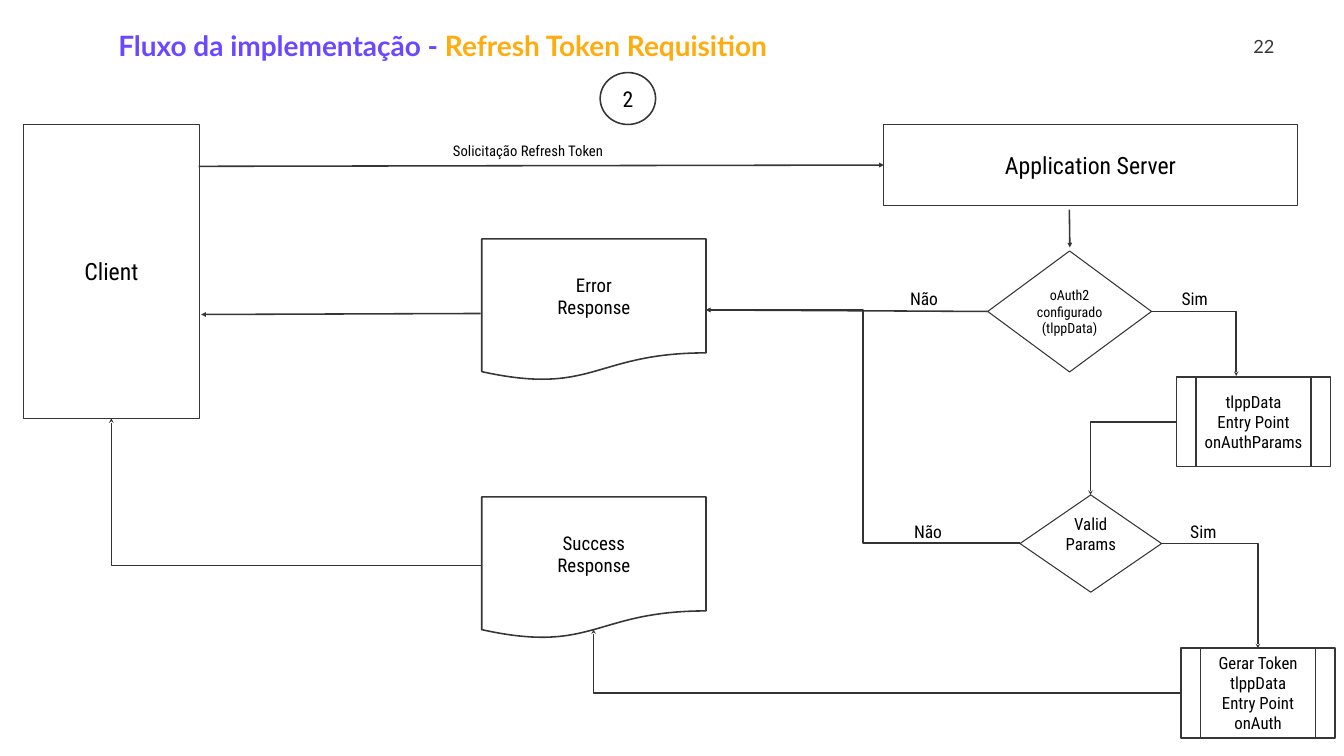
from pptx import Presentation
from pptx.dml.color import RGBColor
from pptx.enum.shapes import MSO_CONNECTOR, MSO_SHAPE
from pptx.enum.text import MSO_ANCHOR, PP_ALIGN
from pptx.oxml.ns import qn
from pptx.util import Pt
from lxml.etree import SubElement

EMU_PER_PX = 9144
INK = "363636"
ELBOW_INK = "333333"
BLACK = "000000"


def px(n):
    return n * EMU_PER_PX


def rgb(value):
    return RGBColor.from_string(value)


class Flow:
    font = "Roboto Condensed"

    def __init__(self, slide):
        self.slide = slide

    def set_text(self, sp, paragraphs, align, **fmt):
        tf = sp.text_frame
        values = {"word_wrap": True, "margin_left": px(10), "margin_right": px(10),
                  "margin_top": px(10), "margin_bottom": px(10), **fmt}
        for name, value in values.items():
            setattr(tf, name, value)
        for i, runs in enumerate(paragraphs):
            p = tf.paragraphs[0] if i == 0 else tf.add_paragraph()
            p.alignment = align
            for text, size, color, font, bold in runs:
                r = p.add_run()
                r.text = text
                for name, value in {"size": Pt(size), "name": font, "bold": bold}.items():
                    setattr(r.font, name, value)
                r.font.color.rgb = rgb(color)

    def node(self, kind, x, y, w, h, lines, size, weight=1.5, **fmt):
        sp = self.slide.shapes.add_shape(kind, px(x), px(y), px(w), px(h))
        sp.shadow.inherit = False
        sp.fill.background()
        sp.line.color.rgb = rgb(INK)
        sp.line.width = Pt(weight)
        paragraphs = [[(line, size, BLACK, self.font, False)] for line in lines]
        self.set_text(sp, paragraphs, PP_ALIGN.CENTER,
                      vertical_anchor=MSO_ANCHOR.MIDDLE, **fmt)
        return sp

    def text(self, x, y, w, h, runs, align=PP_ALIGN.LEFT, **fmt):
        sp = self.slide.shapes.add_textbox(px(x), px(y), px(w), px(h))
        self.set_text(sp, [runs], align, **fmt)

    def label(self, x, y, w, h, text, size=25):
        self.text(x, y, w, h, [(text, size, BLACK, self.font, False)])

    def connector(self, kind, start, end, color, head):
        c = self.slide.shapes.add_connector(kind, *map(px, start + end))
        c.line.color.rgb = rgb(color)
        c.line.width = Pt(2.25)
        properties = c.element.spPr
        SubElement(properties.find(qn("a:ln")), qn("a:tailEnd"), type=head)
        SubElement(properties, qn("a:effectLst"))
        return c

    def arrow(self, start, end, source=None, target=None):
        c = self.connector(MSO_CONNECTOR.STRAIGHT, start, end, INK, "triangle")
        if source:
            c.begin_connect(*source)
        if target:
            c.end_connect(*target)

    def elbow(self, start, end, corner=True):
        c = self.connector(MSO_CONNECTOR.ELBOW, start, end, ELBOW_INK, "stealth")
        if corner:
            c.element.spPr.find(qn("a:prstGeom")).set("prst", "bentConnector2")


def main():
    prs = Presentation()
    prs.slide_width, prs.slide_height = px(2667), px(1500)
    s = prs.slides.add_slide(prs.slide_layouts[6])
    flow = Flow(s)

    slim = {"margin_top": px(5), "margin_bottom": px(5)}
    flow.text(225, 52, 1512, 82,
              [("Fluxo da implementação - ", 40, "6B48FF", "Lato", True),
               ("Refresh Token Requisition", 40, "FEAC0E", "Lato", True)], **slim)
    flow.text(2429, 50, 110, 82, [("22", 26, INK, "Lato", False)], PP_ALIGN.RIGHT,
              vertical_anchor=MSO_ANCHOR.MIDDLE, **slim)

    rect, decision = MSO_SHAPE.RECTANGLE, MSO_SHAPE.FLOWCHART_DECISION
    process, document = MSO_SHAPE.FLOWCHART_PREDEFINED_PROCESS, MSO_SHAPE.FLOWCHART_DOCUMENT
    flow.node(rect, 47, 247, 348, 583, ["Client"], 34)
    server = flow.node(rect, 1754, 247, 820, 161, ["Application Server"], 34)
    configured = flow.node(decision, 1960, 498, 325, 240,
                           ["oAuth2 configurado", "(tlppData)"], 20)
    flow.node(decision, 2024, 982, 281, 193, ["Valid", "Params"], 24,
              margin_bottom=px(50))
    flow.node(process, 2335, 748, 305, 178,
              ["tlppData", "Entry Point", "onAuthParams"], 24, 2.25)
    flow.node(process, 2344, 1286, 305, 178,
              ["Gerar Token", "tlppData", "Entry Point", "onAuth"], 24, 2.25)
    error, _ = [
        flow.node(document, 956, y, 445, 282, [name, "Response"], 27, 2.25)
        for name, y in (("Error", 474), ("Success", 986))]
    flow.node(MSO_SHAPE.FLOWCHART_CONNECTOR, 1191, 144, 110, 103, ["2"], 31, 2.25)

    flow.arrow((394, 330), (1754, 327), target=(server, 1))
    flow.arrow((2122, 416), (2123, 491))
    flow.arrow((1960, 618), (1401, 615), (configured, 1), (error, 3))
    flow.arrow((954, 622), (399, 624))

    for start, end in (((2285, 618), (2453, 746)),
                       ((2335, 837), (2164, 982)),
                       ((2305, 1078), (2496, 1286)),
                       ((2344, 1375), (1178, 1249)),
                       ((954, 1122), (221, 830))):
        flow.elbow(start, end)
    flow.elbow((2024, 1078), (1401, 615), corner=False)

    flow.label(889, 272, 348, 56, "Solicitação Refresh Token", 21)
    for x, y, text in ((2335, 561, "Sim"), (1796, 561, "Não"),
                       (2352, 1024, "Sim"), (1804, 1024, "Não")):
        flow.label(x, y, 152, 62, text)

    prs.save("out.pptx")


if __name__ == "__main__":
    main()
